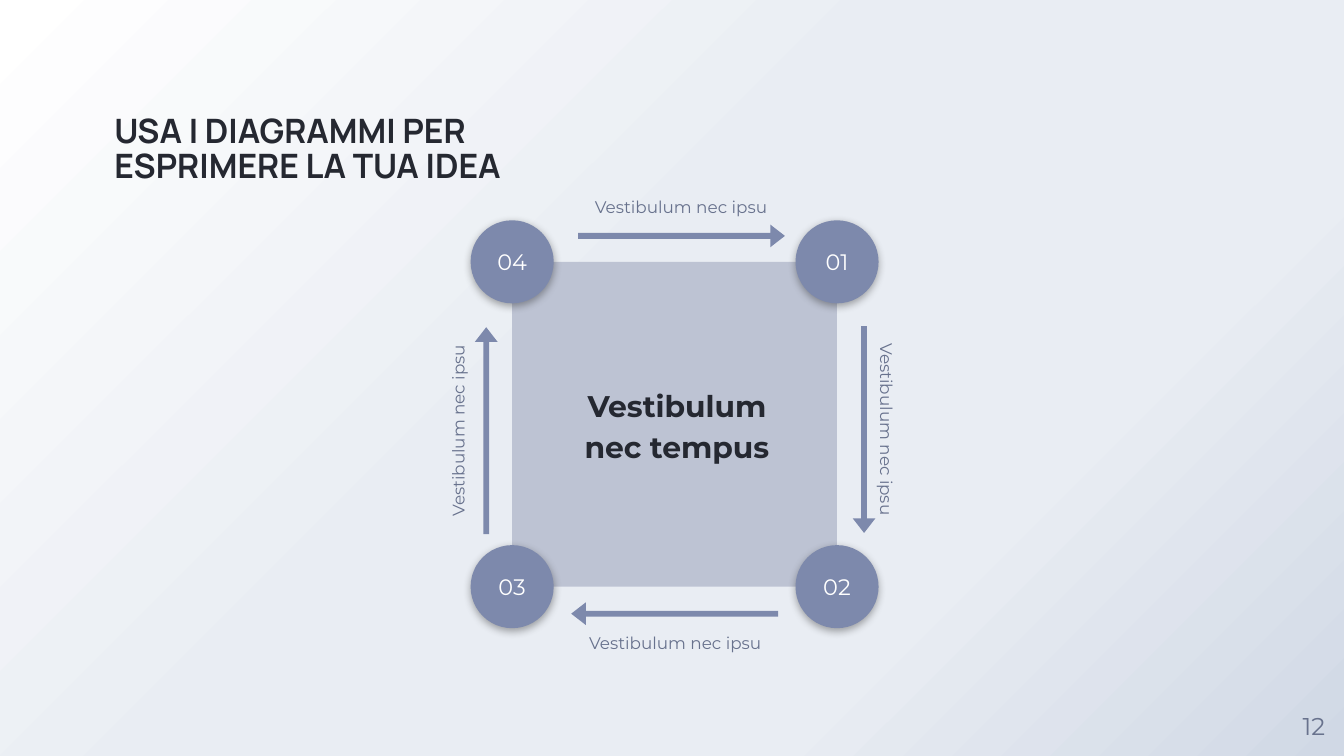
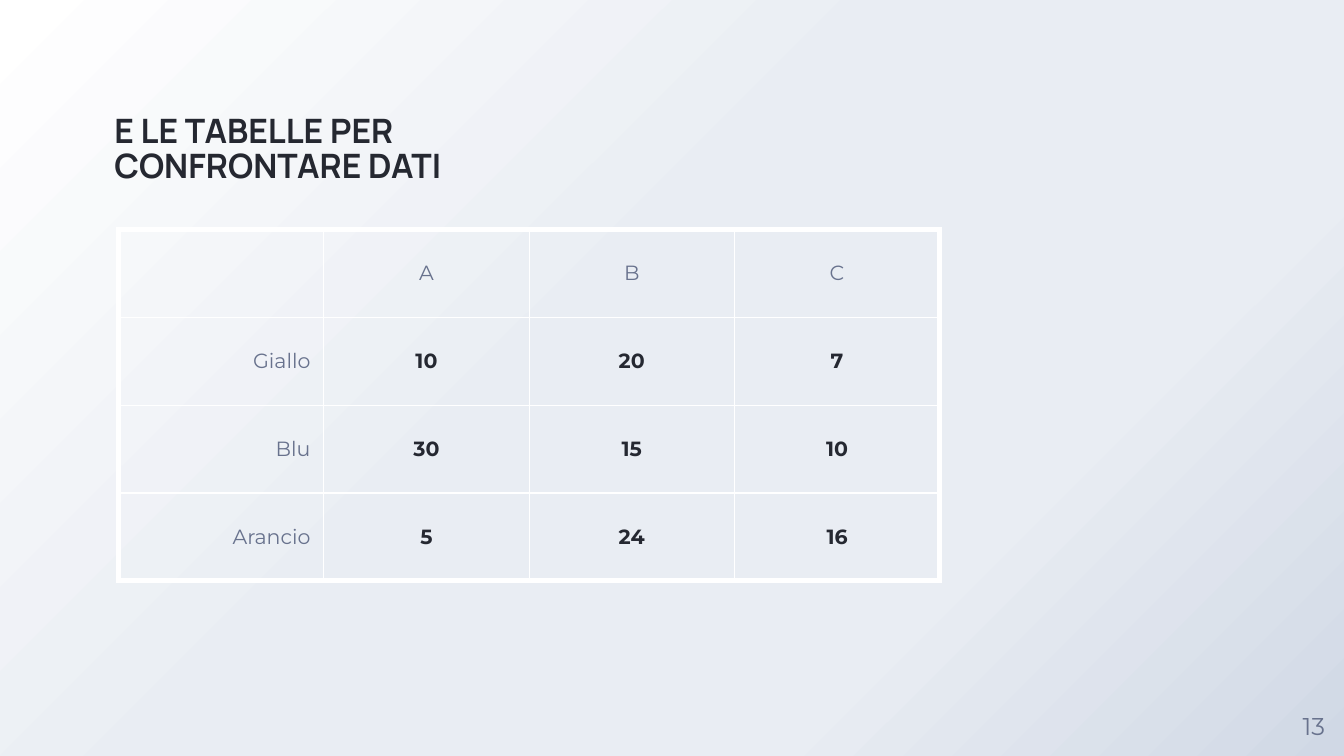
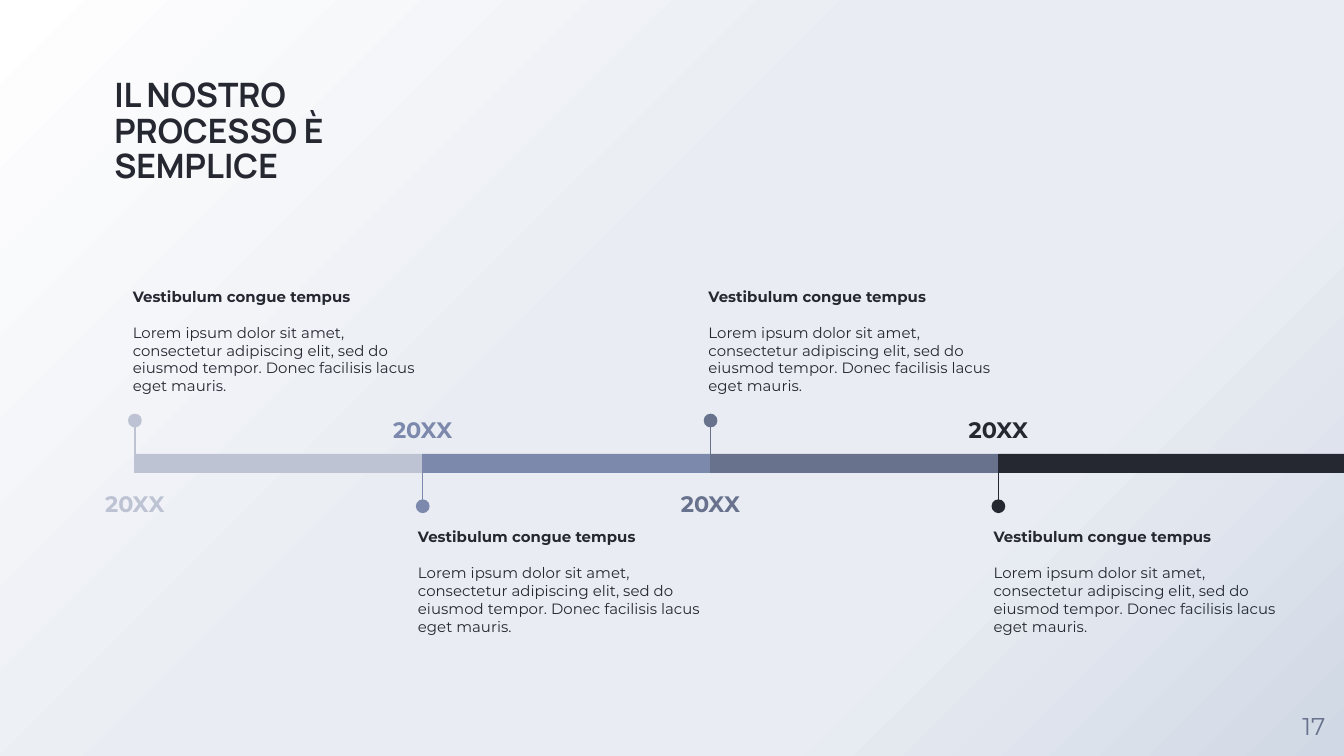
import pptx
import pptx.dml.color
import pptx.enum.shapes
import pptx.enum.text
import pptx.oxml
import pptx.oxml.ns
import pptx.util

Cm = pptx.util.Cm
Pt = pptx.util.Pt
SHAPE = pptx.enum.shapes.MSO_SHAPE
ALIGN = pptx.enum.text.PP_ALIGN
ANCHOR = pptx.enum.text.MSO_ANCHOR

INK, SLATE, BLUE, PALE, WHITE = "252831", "68728D", "7D89AC", "BDC3D3", "FFFFFF"
BACKGROUND = [(0, WHITE), (44, "E9EDF3"), (72, "E9EDF3"), (100, "D0D8E5")]
WIDTH, HEIGHT = 25.4, 14.29


def rgb(value):
    return pptx.dml.color.RGBColor.from_string(value)


def xml(body):
    head, sep, tail = body.partition(" ")
    return pptx.oxml.parse_xml(f"{head} {pptx.oxml.ns.nsdecls('a')} {tail}")


def write(p, text, size=9, color=INK, bold=False, font="Montserrat",
          align=ALIGN.LEFT, spacing=1.0, after=0):
    p.alignment = align
    p.line_spacing = spacing
    p.space_before = Pt(0)
    p.space_after = Pt(after)
    r = p.add_run()
    r.text = text
    r.font.name = font
    r.font.size = Pt(size)
    r.font.bold = bold
    r.font.color.rgb = rgb(color)


class Deck:
    def __init__(self):
        self.prs = pptx.Presentation()
        self.prs.slide_width, self.prs.slide_height = Cm(WIDTH), Cm(HEIGHT)
        self.s = None
        self.paint_master()

    def paint_master(self):
        master = self.prs.slide_master
        fill = master.background.fill
        fill.gradient()
        fill.gradient_angle = 315
        stops = master._element.xpath(".//p:bg//a:gsLst")[0]
        for stop in list(stops):
            stops.remove(stop)
        for pos, color in BACKGROUND:
            stops.append(xml(f'<a:gs pos="{pos * 1000}"><a:srgbClr val="{color}"/></a:gs>'))

    def slide(self, title, number, title_width=9.96):
        self.s = self.prs.slides.add_slide(self.prs.slide_layouts[5])
        sp = self.s.shapes.title
        sp.left, sp.top, sp.width, sp.height = Cm(2.16), Cm(1.12), Cm(title_width), Cm(2.39)
        tf = self.frame(sp, 0, ANCHOR.BOTTOM)
        write(tf.paragraphs[0], title, size=18, bold=True, font="Manrope", spacing=0.88)
        side = 1.14
        self.text(str(number), WIDTH - side, HEIGHT - side, side, side, inset=0,
                  anchor=ANCHOR.MIDDLE, size=13, color=SLATE, align=ALIGN.CENTER)

    def frame(self, sp, inset, anchor):
        tf = sp.text_frame
        tf.word_wrap = True
        tf.auto_size = pptx.enum.text.MSO_AUTO_SIZE.NONE
        tf.vertical_anchor = anchor
        tf.margin_left = tf.margin_right = tf.margin_top = tf.margin_bottom = Cm(inset)
        return tf

    def text(self, text, x, y, w, h, inset=0.25, anchor=ANCHOR.TOP, rotation=0, **fmt):
        sp = self.s.shapes.add_textbox(Cm(x), Cm(y), Cm(w), Cm(h))
        sp.rotation = rotation
        tf = self.frame(sp, inset, anchor)
        write(tf.paragraphs[0], text, **fmt)
        return tf

    def shape(self, kind, x, y, w, h, color, rotation=0):
        sp = self.s.shapes.add_shape(kind, Cm(x), Cm(y), Cm(w), Cm(h))
        sp.shadow.inherit = False
        sp.fill.solid()
        sp.fill.fore_color.rgb = rgb(color)
        sp.line.fill.background()
        sp.rotation = rotation
        return sp

    def badge(self, text, cx, cy, size=1.57):
        sp = self.shape(SHAPE.OVAL, cx - size / 2, cy - size / 2, size, size, BLUE)
        sp._element.spPr.find(pptx.oxml.ns.qn("a:effectLst")).append(xml(
            f'<a:outerShdw blurRad="{Pt(4.5)}" dist="{Pt(1.5)}" dir="5400000" algn="bl" '
            'rotWithShape="0"><a:srgbClr val="212121"><a:alpha val="38000"/>'
            '</a:srgbClr></a:outerShdw>'))
        tf = self.frame(sp, 0.25, ANCHOR.MIDDLE)
        write(tf.paragraphs[0], text, size=12, color=WHITE, align=ALIGN.CENTER)

    def arrow(self, cx, cy, rotation, w=3.91, h=0.43):
        sp = self.shape(SHAPE.RIGHT_ARROW, cx - w / 2, cy - h / 2, w, h, BLUE, rotation)
        sp.adjustments[0], sp.adjustments[1] = 0.255, 0.643

    def line(self, x, y1, y2, color):
        c = self.s.shapes.add_connector(
            pptx.enum.shapes.MSO_CONNECTOR.STRAIGHT, Cm(x), Cm(y1), Cm(x), Cm(y2))
        c.line.color.rgb = rgb(color)
        c.line.width = Pt(0.75)
        c._element.spPr.append(xml("<a:effectLst />"))

    def table(self, rows, x, y, col_width, row_height):
        n_rows, n_cols = len(rows), len(rows[0])
        table = self.s.shapes.add_table(
            n_rows, n_cols, Cm(x), Cm(y), Cm(col_width * n_cols), Cm(row_height * n_rows)).table
        table.first_row = table.horz_banding = False
        for i, row in enumerate(rows):
            for j, text in enumerate(row):
                cell = table.cell(i, j)
                cell.fill.background()
                cell.vertical_anchor = ANCHOR.MIDDLE
                cell.margin_left = cell.margin_right = Cm(0.25)
                cell.margin_top = cell.margin_bottom = Cm(0.18)
                self.borders(cell, L=j == 0, R=j == n_cols - 1, T=i == 0, B=i == n_rows - 1)
                if text:
                    value = i > 0 and j > 0
                    write(cell.text_frame.paragraphs[0], text, size=11, bold=value,
                          color=INK if value else SLATE,
                          align=ALIGN.CENTER if j else ALIGN.RIGHT)

    def borders(self, cell, **outer_sides):
        tcPr = cell._tc.get_or_add_tcPr()
        for k, (side, outer) in enumerate(outer_sides.items()):
            width = Pt(3 if outer else 0.75)
            tcPr.insert(k, xml(f'<a:ln{side} w="{width}"><a:solidFill><a:srgbClr val="{WHITE}"/>'
                               f'</a:solidFill></a:ln{side}>'))


def cycle_slide(deck):
    deck.slide("USA I DIAGRAMMI PER ESPRIMERE LA TUA IDEA", 12)
    left, top, side = 9.68, 4.95, 6.14
    right, bottom = left + side, top + side
    deck.shape(SHAPE.RECTANGLE, left, top, side, side, PALE)
    deck.text("Vestibulum nec tempus", 10.46, 5.84, 4.67, 4.32, anchor=ANCHOR.MIDDLE,
              size=16, bold=True, align=ALIGN.CENTER, spacing=1.15)
    label_w, label_h = 3.86, 0.99
    steps = [
        ("01", (right, top), (16.33, 8.12), 90, (16.76, 8.12), 90),
        ("02", (right, bottom), (12.75, 11.6), 180, (12.76, 12.15), 0),
        ("03", (left, bottom), (9.19, 8.14), 270, (8.65, 8.14), 270),
        ("04", (left, top), (12.88, 4.46), 0, (12.87, 3.9), 0),
    ]
    for number, corner, arrow, direction, (cx, cy), turn in steps:
        deck.text("Vestibulum nec ipsu", cx - label_w / 2, cy - label_h / 2, label_w, label_h,
                  rotation=turn, color=SLATE, align=ALIGN.CENTER, spacing=1.15)
        deck.arrow(*arrow, direction)
        deck.badge(number, *corner)


def table_slide(deck):
    deck.slide("E LE TABELLE PER CONFRONTARE DATI", 13)
    deck.table([
        ["", "A", "B", "C"],
        ["Giallo", "10", "20", "7"],
        ["Blu", "30", "15", "10"],
        ["Arancio", "5", "24", "16"],
    ], 2.24, 4.34, 3.88, 1.66)


def timeline_slide(deck):
    deck.slide("IL NOSTRO PROCESSO È SEMPLICE", 17, title_width=4.62)
    start, step, bar_top, bar_h = 2.55, 5.44, 8.58, 0.36
    bar_bottom = bar_top + bar_h
    stem, dot, year_w, year_h = 0.63, 0.26, 2.08, 1.04
    colors = [PALE, BLUE, SLATE, INK]
    for i, color in enumerate(colors):
        x = start + i * step
        bar_w = step if i < len(colors) - 1 else WIDTH - x
        deck.shape(SHAPE.RECTANGLE, x, bar_top, bar_w, bar_h, color)
        if i % 2 == 0:
            tip, base, year_y = bar_top - stem, bar_bottom, bar_bottom
            note_x, note_y = x - 0.29, 5.18
        else:
            tip, base, year_y = bar_bottom + stem, bar_top, bar_top - year_h
            note_x, note_y = x - 0.34, 9.73
        deck.line(x, tip, base, color)
        deck.shape(SHAPE.OVAL, x - dot / 2, tip - dot / 2, dot, dot, color)
        deck.text("20XX", x - year_w / 2, year_y, year_w, year_h, size=12, bold=True,
                  color=color, align=ALIGN.CENTER, spacing=1.15)
        tf = deck.text("Vestibulum congue tempus", note_x, note_y, 6.25, 2.62,
                       size=8, bold=True, after=9.75)
        write(tf.add_paragraph(), "Lorem ipsum dolor sit amet, consectetur adipiscing elit, "
              "sed do eiusmod tempor. Donec facilisis lacus eget mauris.", size=8)


def main():
    deck = Deck()
    cycle_slide(deck)
    table_slide(deck)
    timeline_slide(deck)
    deck.prs.save("out.pptx")


if __name__ == "__main__":
    main()
